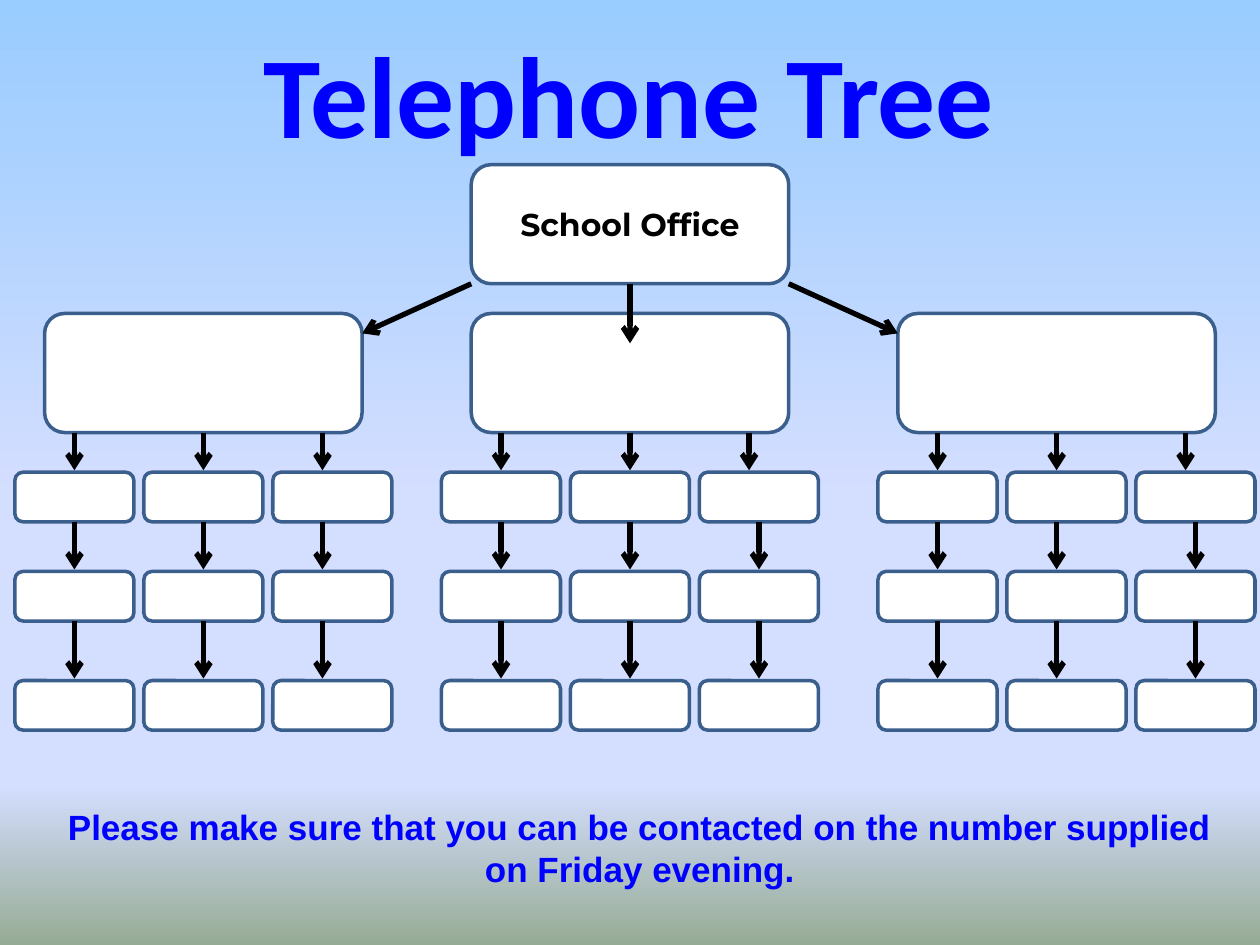
from lxml.etree import SubElement
from pptx import Presentation
from pptx.dml.color import RGBColor as Color
from pptx.enum.shapes import MSO_CONNECTOR as Connector, MSO_SHAPE as Shape
from pptx.enum.text import MSO_ANCHOR as Anchor, PP_ALIGN as Align
from pptx.oxml.ns import qn
from pptx.util import Inches, Mm, Pt

COLORS = {
    "heading": "0000FF",
    "box": "FFFFFF",
    "border": "3A5F8C",
    "ink": "000000",
}
BACKGROUND_STOPS = [(0, "99CCFF"), (53, "D4DEFF"), (83, "D4DEFF"), (100, "96AB94")]
TITLE_FONT = {"name": "Calibri", "size": Pt(66), "bold": True}
OFFICE_FONT = {"name": "Montserrat", "size": Pt(18), "bold": True}
NOTE_FONT = {"name": "Arial", "size": Pt(20), "bold": True}

CELL = 2
LEADER_SIZE = (32, 12)
MEMBER_SIZE = (12, 5)
OFFICE_ROW, LEADER_ROW = 16.6, 31.6
MEMBER_ROWS = [47.6, 57.6, 68.6]
LEADER_COLUMNS = [4.5, 47.5, 90.5]
MEMBER_COLUMNS = [1.5, 44.5, 88.5]
MEMBER_PITCH = 13
ARROW_GAP = 0.2
LEADER_ARROWS = [7.5, 20.5, 32.5, 50.5, 63.5, 75.5, 94.5, 106.5, 119.5]
MEMBER_ARROWS = [7.5, 20.5, 32.5, 50.5, 63.5, 76.5, 94.5, 106.5, 120.5]


def grid(*cells):
    return [Mm(CELL * cell) for cell in cells]


def rgb(name):
    return Color.from_string(COLORS[name])


def paint_background(slide):
    fill = slide.background.fill
    fill.gradient()
    fill.gradient_angle = 270
    stops = slide.element.find(".//" + qn("a:gsLst"))
    for stop in list(stops):
        stops.remove(stop)
    for position, color in BACKGROUND_STOPS:
        stop = SubElement(stops, qn("a:gs"), pos=str(position * 1000))
        SubElement(stop, qn("a:srgbClr"), val=color)


def write(shape, text, font, color, anchor):
    frame = shape.text_frame
    frame.word_wrap = True
    frame.vertical_anchor = anchor
    paragraph = frame.paragraphs[0]
    paragraph.alignment = Align.CENTER
    run = paragraph.add_run()
    run.text = text
    for name, value in font.items():
        setattr(run.font, name, value)
    run.font.color.rgb = rgb(color)


def place_title(slide, text):
    title = slide.shapes.title
    title.left, title.top, title.width, title.height = grid(12.4, 1.7, 102, 15.4)
    write(title, text, TITLE_FONT, "heading", Anchor.TOP)


def add_note(slide, text):
    note = slide.shapes.add_textbox(*grid(4.5, 80.6, 120, 9.8))
    write(note, text, NOTE_FONT, "heading", Anchor.TOP)


def add_box(slide, column, row, size):
    box = slide.shapes.add_shape(
        Shape.FLOWCHART_ALTERNATE_PROCESS, *grid(column, row, *size))
    box.shadow.inherit = False
    box.fill.solid()
    box.fill.fore_color.rgb = rgb("box")
    box.line.color.rgb = rgb("border")
    box.line.width = Pt(2)
    return box


def add_arrow(slide, start, end):
    arrow = slide.shapes.add_connector(Connector.STRAIGHT, *grid(*start, *end))
    arrow.line.color.rgb = rgb("ink")
    arrow.line.width = Pt(3)
    properties = arrow.element.spPr
    SubElement(properties.find(qn("a:ln")), qn("a:tailEnd"), type="arrow")
    SubElement(properties, qn("a:effectLst"))


def add_leaders(slide):
    width, height = LEADER_SIZE
    left, middle, right = LEADER_COLUMNS
    office = add_box(slide, middle, OFFICE_ROW, LEADER_SIZE)
    write(office, "School Office", OFFICE_FONT, "ink", Anchor.MIDDLE)
    for column in LEADER_COLUMNS:
        add_box(slide, column, LEADER_ROW, LEADER_SIZE)

    bottom = OFFICE_ROW + height
    add_arrow(slide, (middle, bottom), (left + width, LEADER_ROW + 2))
    add_arrow(slide, (middle + width / 2, bottom), (middle + width / 2, LEADER_ROW + 3))
    add_arrow(slide, (middle + width, bottom), (right, LEADER_ROW + 2))


def add_members(slide):
    starts = [LEADER_ROW + LEADER_SIZE[1]]
    starts += [row + MEMBER_SIZE[1] for row in MEMBER_ROWS[:-1]]
    arrow_columns = [LEADER_ARROWS, MEMBER_ARROWS, MEMBER_ARROWS]
    for row, start, columns in zip(MEMBER_ROWS, starts, arrow_columns):
        for first in MEMBER_COLUMNS:
            for index in range(3):
                add_box(slide, first + index * MEMBER_PITCH, row, MEMBER_SIZE)
        for column in columns:
            add_arrow(slide, (column, start), (column, row - ARROW_GAP))


def main():
    presentation = Presentation()
    presentation.slide_width = Inches(10)
    presentation.slide_height = Inches(7.5)
    slide = presentation.slides.add_slide(presentation.slide_layouts.get_by_name("Title Only"))
    paint_background(slide)
    place_title(slide, "Telephone Tree")
    add_leaders(slide)
    add_members(slide)
    add_note(slide, "Please make sure that you can be contacted on the number "
                    "supplied on Friday evening.")
    presentation.save("out.pptx")


if __name__ == "__main__":
    main()
